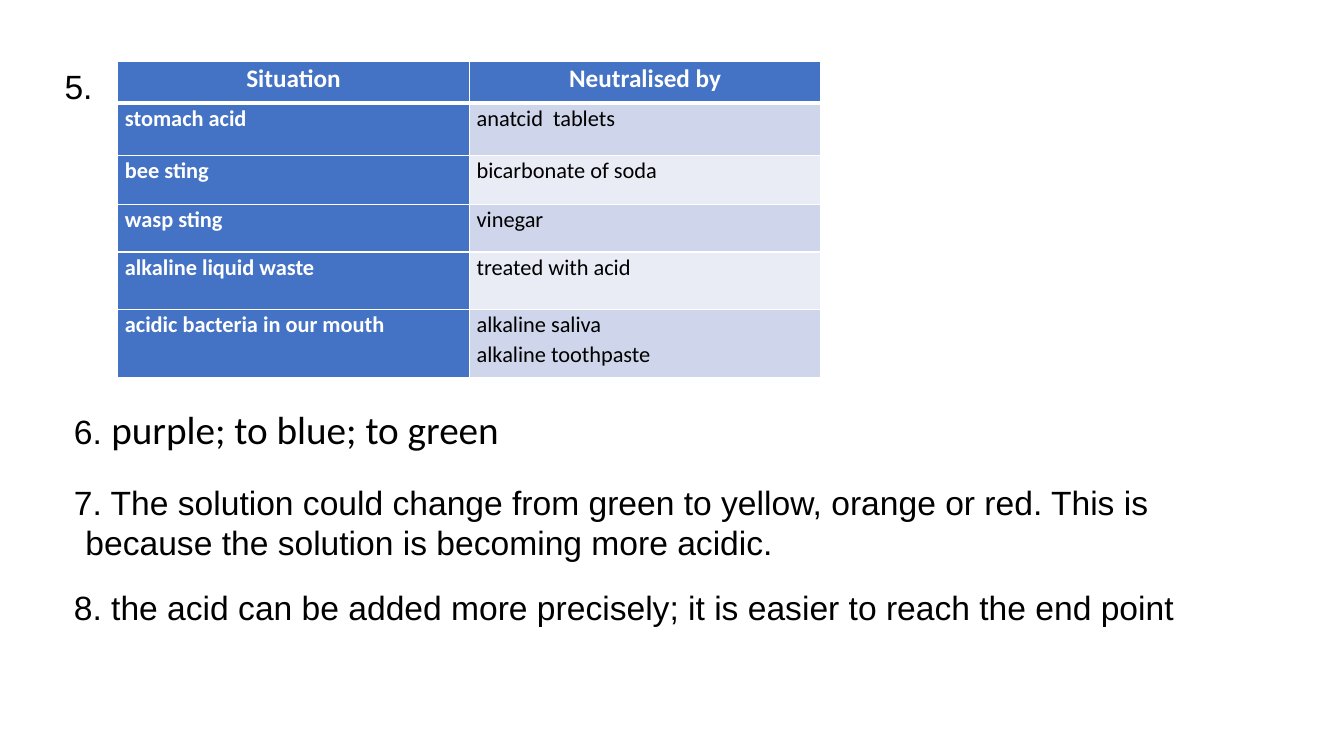
from dataclasses import dataclass

from lxml.etree import SubElement
from pptx import Presentation
from pptx.dml.color import RGBColor
from pptx.enum.text import PP_ALIGN
from pptx.oxml.ns import qn
from pptx.slide import Slide
from pptx.table import _Cell
from pptx.util import Emu, Pt

PX = 9525  # EMU in one px, 96 px to the inch

WHITE = RGBColor(0xFF, 0xFF, 0xFF)
BLACK = RGBColor(0x00, 0x00, 0x00)
BLUE = RGBColor(0x44, 0x72, 0xC4)
BAND_DARK = RGBColor(0xCF, 0xD5, 0xEA)
BAND_LIGHT = RGBColor(0xE9, 0xEB, 0xF5)


def px(length: int) -> Emu:
    return Emu(length * PX)


@dataclass(frozen=True)
class Span:
    text: str
    size: int = 24
    font: str = "Arial"
    color: RGBColor = BLACK
    bold: bool = False


@dataclass(frozen=True)
class Answer:
    left: int
    top: int
    width: int
    height: int
    spans: tuple[Span, ...]
    hanging: bool = True


@dataclass(frozen=True)
class Row:
    height: int
    situation: str
    remedies: tuple[str, ...]


ROWS = (
    Row(40, "Situation", ("Neutralised by",)),
    Row(50, "stomach acid", ("anatcid  tablets",)),
    Row(47, "bee sting", ("bicarbonate of soda",)),
    Row(45, "wasp sting", ("vinegar",)),
    Row(55, "alkaline liquid waste", ("treated with acid",)),
    Row(65, "acidic bacteria in our mouth", ("alkaline saliva", "alkaline toothpaste")),
)
TABLE_LEFT, TABLE_TOP, COLUMN_WIDTH = 112, 58, 335

ANSWERS = (
    Answer(52, 58, 948, 130, (Span("5."),)),
    Answer(61, 381, 948, 210,
           (Span("6. "), Span("purple; to blue; to green", 28, "Calibri")), hanging=False),
    Answer(61, 454, 1157, 150,
           (Span("7. The solution could change from green to yellow, orange or red. "
                 "This is because the solution is becoming more acidic."),)),
    Answer(61, 554, 1157, 130,
           (Span("8. the acid can be added more precisely; "
                 "it is easier to reach the end point"),)),
)


def add_span(para, span: Span) -> None:
    run = para.add_run()
    run.text = span.text
    run.font.size = Pt(span.size)
    run.font.name = span.font
    run.font.bold = span.bold
    run.font.color.rgb = span.color


def add_answer(page: Slide, answer: Answer) -> None:
    box = page.shapes.add_textbox(px(answer.left), px(answer.top),
                                  px(answer.width), px(answer.height))
    box.text_frame.word_wrap = True
    para = box.text_frame.paragraphs[0]
    if answer.hanging:
        para.space_after = Pt(3)
        properties = para._p.get_or_add_pPr()
        properties.set("marL", str(px(11)))
        properties.set("indent", str(px(-19)))
    for span in answer.spans:
        add_span(para, span)


def set_borders(cell: _Cell, top: int, bottom: int) -> None:
    """Draw white cell borders; widths are in points."""
    properties = cell._tc.get_or_add_tcPr()
    for side, width in (("L", 1), ("R", 1), ("T", top), ("B", bottom)):
        line = SubElement(properties, qn(f"a:ln{side}"), w=str(Pt(width)))
        SubElement(SubElement(line, qn("a:solidFill")), qn("a:srgbClr"), val=str(WHITE))


def fill_cell(cell: _Cell, lines: tuple[str, ...], row: int, column: int) -> None:
    is_header = row == 0
    is_heading = is_header or column == 0
    set_borders(cell, top=3 if row == 1 else 1, bottom=3 if is_header else 1)
    cell.fill.solid()
    band = BAND_DARK if row % 2 else BAND_LIGHT
    cell.fill.fore_color.rgb = BLUE if is_heading else band
    cell.margin_left = cell.margin_right = px(7)
    cell.margin_top = cell.margin_bottom = 0
    frame = cell.text_frame
    for number, line in enumerate(lines):
        para = frame.add_paragraph() if number else frame.paragraphs[0]
        para.line_spacing = 1.07
        para.alignment = PP_ALIGN.CENTER if is_header else PP_ALIGN.LEFT
        add_span(para, Span(line, 18 if is_header else 16, "Calibri",
                            WHITE if is_heading else BLACK, is_heading))


def add_neutralisation_table(page: Slide) -> None:
    height = sum(row.height for row in ROWS)
    table = page.shapes.add_table(len(ROWS), 2, px(TABLE_LEFT), px(TABLE_TOP),
                                  px(2 * COLUMN_WIDTH), px(height)).table
    for index, row in enumerate(ROWS):
        table.rows[index].height = px(row.height)
        fill_cell(table.cell(index, 0), (row.situation,), index, 0)
        fill_cell(table.cell(index, 1), row.remedies, index, 1)


def main() -> None:
    deck = Presentation()
    deck.slide_width, deck.slide_height = px(1280), px(720)
    page = deck.slides.add_slide(deck.slide_layouts[6])

    # Question 5 table
    add_neutralisation_table(page)

    # Numbered answers
    for answer in ANSWERS:
        add_answer(page, answer)

    deck.save("out.pptx")


if __name__ == "__main__":
    main()
